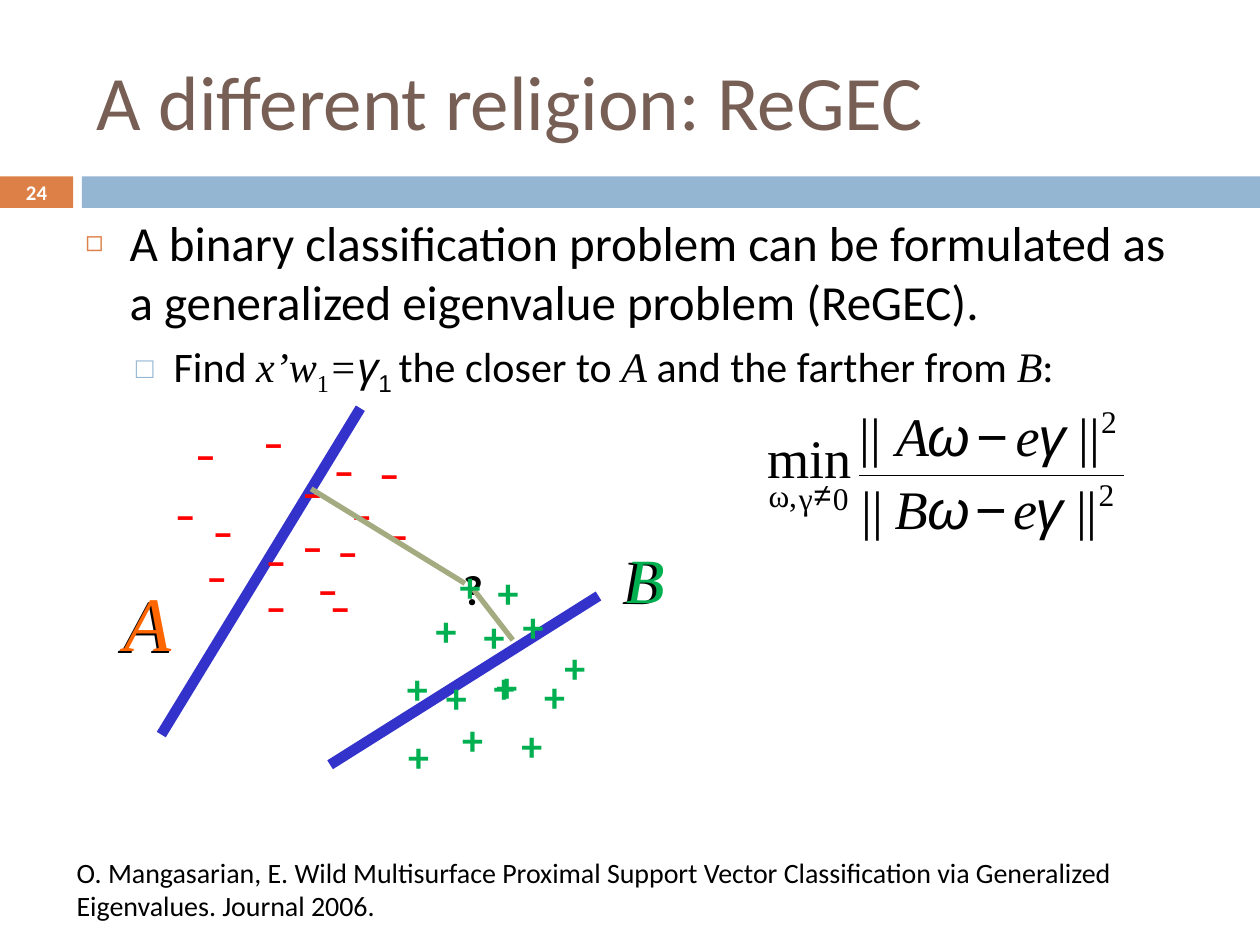
from dataclasses import dataclass

from lxml import etree
from pptx import Presentation
from pptx.dml.color import RGBColor
from pptx.enum import shapes, text
from pptx.oxml import ns
from pptx.util import Inches, Pt


@dataclass(frozen=True)
class Theme:
    sans: str = "Calibri"
    serif: str = "Times New Roman"
    symbol: str = "Arial"
    black: str = "000000"
    white: str = "FFFFFF"
    title: str = "775F55"
    orange: str = "DD8047"
    blue: str = "94B6D2"
    plane: str = "3333CC"
    link: str = "A5AB81"
    minus: str = "FF0000"
    plus: str = "00B050"
    label_a: str = "FF6600"
    title_size: float = 44
    body_size: float = 28
    sub_size: float = 24
    mark_size: float = 24
    label_a_size: float = 44
    label_b_size: float = 36
    formula_size: float = 31
    index_size: float = 18
    note_size: float = 16
    number_size: float = 11.9


THEME = Theme()


def add_run(paragraph, words, size=24, font=THEME.sans, color=THEME.black,
            bold=False, italic=False, baseline=0):
    run = paragraph.add_run()
    run.text = words
    run.font.size, run.font.name = Pt(size), font
    run.font.bold, run.font.italic = bold, italic
    run.font.color.rgb = RGBColor.from_string(color)
    if baseline:
        run.font._element.set("baseline", str(baseline * 1000))


def add_text(slide, words, left, top, width, height, wrap=False, grow=True,
             inset=True, anchor=text.MSO_ANCHOR.TOP, align=None, **style):
    box = slide.shapes.add_textbox(*map(Inches, (left, top, width, height)))
    frame = box.text_frame
    frame.word_wrap = wrap
    frame.vertical_anchor = anchor
    if grow:
        frame.auto_size = text.MSO_AUTO_SIZE.SHAPE_TO_FIT_TEXT
    if not inset:
        frame.margin_left = frame.margin_right = 0
        frame.margin_top = frame.margin_bottom = 0
    paragraph = frame.paragraphs[0]
    paragraph.alignment = align
    if words:
        add_run(paragraph, words, **style)
    return frame


def add_line(slide, start, end, color, width):
    line = slide.shapes.add_connector(
        shapes.MSO_CONNECTOR.STRAIGHT, *map(Inches, (*start, *end)))
    line.line.color.rgb = RGBColor.from_string(color)
    line.line.width = Pt(width)
    etree.SubElement(line._element.spPr, ns.qn("a:effectLst"))


def add_bar(slide, left, top, width, height, color):
    bar = slide.shapes.add_shape(
        shapes.MSO_SHAPE.RECTANGLE, *map(Inches, (left, top, width, height)))
    bar.shadow.inherit = False
    bar.fill.solid()
    bar.fill.fore_color.rgb = RGBColor.from_string(color)
    bar.line.fill.background()


def set_bullet(paragraph, character, color, percent, margin, hanging, before):
    paragraph.space_before = Pt(before)
    properties = paragraph._p.get_or_add_pPr()
    properties.set("marL", str(Inches(margin)))
    properties.set("indent", str(-Inches(hanging)))
    bullet_color = etree.SubElement(properties, ns.qn("a:buClr"))
    etree.SubElement(bullet_color, ns.qn("a:srgbClr"), val=color)
    etree.SubElement(properties, ns.qn("a:buSzPct"), val=str(percent * 1000))
    etree.SubElement(properties, ns.qn("a:buFont"), typeface=THEME.symbol)
    etree.SubElement(properties, ns.qn("a:buChar"), char=character)


def add_header(slide, left, top, width):
    # Title above a divided band that carries the slide number
    middle = text.MSO_ANCHOR.MIDDLE
    add_text(slide, "A different religion: ReGEC", left + 0.67, top + 0.25, 8.92, 1.08,
             wrap=True, grow=False, anchor=middle, size=THEME.title_size, color=THEME.title)
    add_bar(slide, left, top + 1.4, 0.58, 0.25, THEME.orange)
    add_bar(slide, left + 0.65, top + 1.4, width - 0.65, 0.25, THEME.blue)
    add_text(slide, "24", left, top + 1.39, 0.58, 0.27, wrap=True, grow=False,
             anchor=middle, align=text.PP_ALIGN.CENTER,
             size=THEME.number_size, color=THEME.white, bold=True)


def add_statement(slide, left, top, width, height):
    frame = add_text(slide, "", left, top, width, height, wrap=True, grow=False)
    problem = frame.paragraphs[0]
    set_bullet(problem, "◻", THEME.orange, 60, 0.35, 0.35, 7)
    add_run(problem, "A binary classification problem can be formulated as "
            "a generalized eigenvalue problem (ReGEC).", size=THEME.body_size)

    goal = frame.add_paragraph()
    goal.level = 1
    set_bullet(goal, "□", THEME.blue, 70, 0.7, 0.3, 5.5)
    math_style = dict(font=THEME.serif, italic=True)
    for words, style in (
        ("Find ", {}),
        ("x’w", math_style),
        ("1", dict(font=THEME.serif, baseline=-25)),
        ("=", math_style),
        ("γ", dict(font=THEME.symbol, italic=True)),
        ("1 ", dict(font=THEME.symbol, baseline=-25)),
        ("the closer to ", {}),
        ("A", math_style),
        (" and the farther from ", {}),
        ("B", math_style),
        (":", {}),
    ):
        add_run(goal, words, size=THEME.sub_size, **style)


def add_scatter(slide, left, top):
    minuses = [(2.02, 1.56), (1.92, 1.42), (0.79, 0.83), (1.09, 0.96), (0.95, 0.35),
               (1.49, 0.26), (1.8, 0.65), (2.05, 0.48), (2.41, 0.5), (2.19, 0.83),
               (2.08, 1.12), (1.8, 1.08), (1.51, 1.19), (1.04, 1.32), (1.51, 1.56),
               (2.48, 0.99)]
    pluses = [(2.64, 2.75), (2.63, 2.21), (2.86, 1.75), (2.94, 2.28), (3.07, 2.61),
              (3.35, 1.45), (3.24, 1.8), (3.34, 2.19), (3.55, 1.72), (3.32, 2.2),
              (3.54, 2.66), (3.88, 2.04), (3.72, 2.27)]

    def add_marks(sign, places, width, color):
        for x, y in places:
            add_text(slide, sign, left + x, top + y, width, 0.5,
                     size=THEME.mark_size, color=color, bold=True)

    def add_segment(start, end, color, width):
        add_line(slide, (left + start[0], top + start[1]),
                 (left + end[0], top + end[1]), color, width)

    # Unknown point and the two planes
    add_marks("?", [(3.08, 1.42)], 0.36, THEME.black)
    add_segment((0.78, 2.83), (2.36, 0.24), THEME.plane, 6)
    add_segment((2.12, 3.07), (4.25, 1.73), THEME.plane, 6)

    # Class names, each over its dark double
    for name, x, y, width, height, size, color in (
        ("A", 0.37, 1.53, 0.61, 0.83, THEME.label_a_size, THEME.black),
        ("B", 4.34, 1.25, 0.53, 0.7, THEME.label_b_size, THEME.black),
        ("B", 4.37, 1.24, 0.51, 0.7, THEME.label_b_size, THEME.plus),
        ("A", 0.39, 1.51, 0.57, 0.83, THEME.label_a_size, THEME.label_a),
    ):
        add_text(slide, name, left + x, top + y, width, height, size=size,
                 font=THEME.serif, color=color, italic=True)

    # Points of both classes, and distances to the planes
    add_marks("–", minuses, 0.46, THEME.minus)
    add_marks("+", pluses, 0.52, THEME.plus)
    add_segment((3.19, 1.63), (1.97, 0.88), THEME.link, 3)
    add_segment((3.26, 1.68), (3.57, 2.08), THEME.link, 3)
    add_marks("+", [(3.05, 1.4)], 0.52, THEME.plus)


def add_formula(slide, left, top):
    def add_symbol(words, x, y, width, size=THEME.formula_size, font=THEME.serif,
                   italic=False):
        height = 0.52 if size == THEME.formula_size else 0.3
        add_text(slide, words, left + x, top + y, width, height, inset=False,
                 size=size, font=font, italic=italic)

    # Operator with its condition
    add_symbol("min", 0, 0.18, 0.68)
    for words, x, y, width, font in (
        ("ω,", 0.01, 0.59, 0.23, THEME.serif), ("γ", 0.25, 0.61, 0.11, THEME.serif),
        ("≠", 0.37, 0.58, 0.14, THEME.symbol), ("0", 0.52, 0.61, 0.13, THEME.serif),
    ):
        add_symbol(words, x, y, width, THEME.index_size, font)

    # Fraction: both rows share one pattern
    add_line(slide, (left + 0.73, top + 0.58), (left + 2.83, top + 0.58), THEME.black, 0.5)
    for matrix, y, opening, matrix_x, shift in (
        ("A", 0, 0.73, 1.02, 0), ("B", 0.58, 0.75, 1.01, -0.02),
    ):
        add_symbol("||", opening, y, 0.18)
        add_symbol(matrix, matrix_x, y, 0.26, italic=True)
        add_symbol("ω", 1.27, y, 0.3, font=THEME.symbol, italic=True)
        add_symbol("−", 1.66 + shift / 2, y, 0.24, font=THEME.symbol)
        add_symbol("e", 1.97 + shift, y, 0.19, italic=True)
        add_symbol("γ", 2.15 + shift, y, 0.18, font=THEME.symbol, italic=True)
        add_symbol("||", 2.47 + shift, y, 0.18)
        add_symbol("2", 2.65 + shift, y, 0.13, THEME.index_size)


def add_reference(slide, left, top, width, height):
    add_text(slide, "O. Mangasarian, E. Wild Multisurface Proximal Support Vector "
             "Classification via Generalized Eigenvalues. Journal 2006.",
             left, top, width, height, wrap=True, size=THEME.note_size)


def main():
    presentation = Presentation()
    presentation.slide_width, presentation.slide_height = Inches(10), Inches(7.5)
    slide = presentation.slides.add_slide(presentation.slide_layouts[6])
    add_header(slide, 0, 0, 10)
    add_statement(slide, 0.58, 1.64, 9, 5.36)
    add_scatter(slide, 0.5, 3)
    add_formula(slide, 6.09, 3.19)
    add_reference(slide, 0.51, 6.74, 8.82, 0.64)
    presentation.save("out.pptx")


if __name__ == "__main__":
    main()
